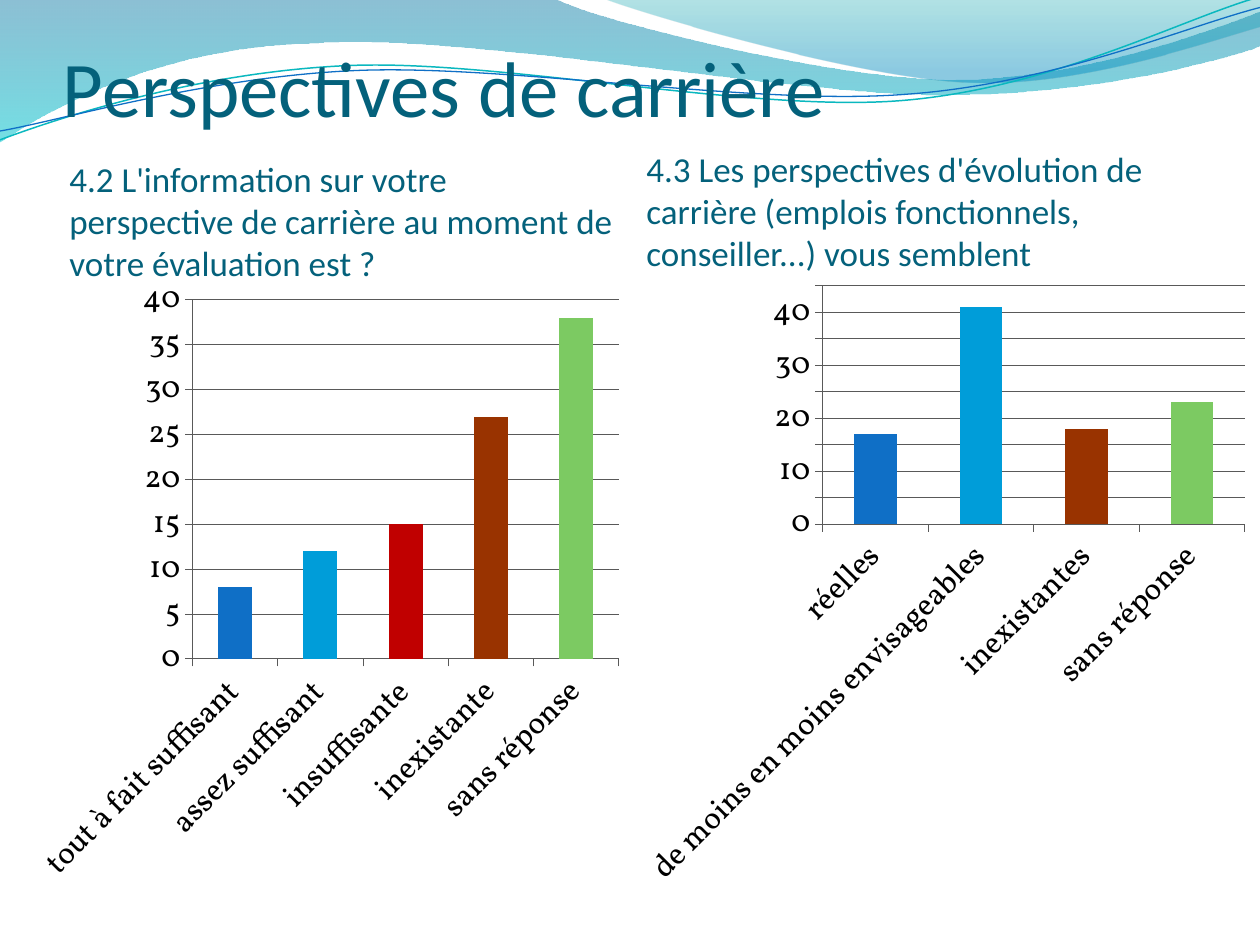
from math import cos, radians, sin

from lxml.etree import SubElement
from pptx import Presentation
from pptx.chart.data import CategoryChartData
from pptx.dml.color import RGBColor
from pptx.enum.chart import XL_CHART_TYPE, XL_TICK_MARK
from pptx.enum.text import MSO_ANCHOR
from pptx.oxml import parse_xml
from pptx.oxml.ns import nsdecls, qn
from pptx.util import Inches, Pt

COLORS = {"title": "04617B", "blue": "0F6FC6", "sky": "009DD9", "red": "C00000",
          "brown": "993300", "green": "7CCA62", "teal": "0AB8BF", "deep": "0074A1",
          "aqua": "00C6CF", "sea": "00A1A9", "azure": "008BBF", "grid": "595959",
          "text": "000000"}

WAVE = [(0, 0), (4.4, -0.01), (4.76, 0.17, 6.64, 0.63, 7.58, 0.63),
        (8.53, 0.63, 9.58, 0.26, 10, 0.09), (10.01, 0.36),
        (9.83, 0.44, 8.7, 0.76, 7.46, 0.75), (6.22, 0.75, 3.82, 0.28, 2.57, 0.34),
        (1.29, 0.36, 0.46, 0.83, -0.01, 1.13)]
CREST = [(4.79, -0.01), (5.09, 0.11, 6.82, 0.62, 7.69, 0.65),
         (8.56, 0.69, 9.61, 0.32, 10, 0.21), (10, 0)]
TEAL_LINE = [(0, 1.11), (0.48, 0.93, 1.58, 0.57, 2.77, 0.52),
             (3.95, 0.47, 5.93, 0.89, 7.13, 0.8), (8.33, 0.71, 9.38, 0.15, 9.98, -0.02)]
BLUE_LINE = [(0, 1.04), (0.47, 0.96, 1.64, 0.61, 2.83, 0.56),
             (4.03, 0.51, 5.97, 0.84, 7.17, 0.75), (8.36, 0.67, 9.41, 0.21, 10, 0.06)]
TILT = 2.7


def rgb(name):
    """Return the named colour."""
    return RGBColor.from_string(COLORS[name])


def set_format(obj, values):
    """Set every attribute listed in a dict."""
    for key, value in values.items():
        setattr(obj, key, value)


def split_points(step):
    """Split a flat step into its x, y pairs."""
    return list(zip(step[::2], step[1::2]))


def turn(step, center):
    """Turn the points of a step clockwise by the tilt angle."""
    a, (cx, cy) = radians(TILT), center
    return tuple(v for x, y in split_points(step)
                 for v in (cx + (x - cx) * cos(a) - (y - cy) * sin(a),
                           cy + (x - cx) * sin(a) + (y - cy) * cos(a)))


def add_outline(s, left, top, steps, close):
    """Add a freeform whose six-number steps are cubic curves."""
    pts = [(Inches(left + x), Inches(top + y)) for step in steps for x, y in split_points(step)]
    fb = s.shapes.build_freeform(*pts[0])
    fb.add_line_segments(pts[1:], close=close)
    sp = fb.convert_to_shape()
    sp.shadow.inherit = False
    segments = iter(list(sp._element.iter(qn("a:lnTo"))))
    for step in steps[1:]:
        group = [next(segments) for _ in split_points(step)]
        if len(group) == 3:
            group[0].tag = qn("a:cubicBezTo")
            for segment in group[1:]:
                group[0].append(segment[0])
                segment.getparent().remove(segment)
    return sp


def add_band(s, left, top, steps, stops):
    """Add a wave filled with a translucent vertical gradient."""
    sp = add_outline(s, left, top, steps, True)
    sp.line.fill.background()
    sp.fill.gradient()
    sp.fill.gradient_angle = 270
    for stop, (position, color, _) in zip(sp.fill.gradient_stops, stops):
        stop.position = position
        stop.color.rgb = rgb(color)
    for clr, (_, _, alpha) in zip(sp._element.spPr.iter(qn("a:srgbClr")), stops):
        SubElement(clr, qn("a:alpha"), val=str(alpha * 1000))


def add_curve(s, left, top, steps, center, color, width):
    """Add a tilted open curve."""
    sp = add_outline(s, left, top, [turn(step, center) for step in steps], False)
    sp.rotation = 360 - TILT
    sp.fill.background()
    sp.line.color.rgb = rgb(color)
    sp.line.width = Pt(width)


def add_header(s, left, top):
    """Draw the waves across the top of the slide."""
    add_band(s, left, top, WAVE, [(0, "deep", 45), (1, "aqua", 55)])
    add_band(s, left, top, CREST, [(0, "sea", 30), (0.8, "azure", 45)])
    add_curve(s, left, top, TEAL_LINE, (4.99, 0.58), "teal", 0.85)
    add_curve(s, left, top, BLUE_LINE, (5, 0.59), "blue", 0.75)


def add_text(s, box, text, size, frame, before=0):
    """Add one paragraph of text in a box."""
    tf = s.shapes.add_textbox(*map(Inches, box)).text_frame
    set_format(tf, {"word_wrap": True, **frame})
    p = tf.paragraphs[0]
    p.space_before = Pt(before)
    r = p.add_run()
    r.text = text
    set_format(r.font, {"size": Pt(size), "name": "Calibri"})
    r.font.color.rgb = rgb("title")


def set_plot_area(chart, box, plot):
    """Place the inner plot area, given relative to the chart box in inches."""
    area = chart._chartSpace.chart.plotArea
    for old in area.findall(qn("c:layout")):
        area.remove(old)
    layout = parse_xml(f"<c:layout {nsdecls('c')}><c:manualLayout/></c:layout>")
    manual = layout[0]
    SubElement(manual, qn("c:layoutTarget"), val="inner")
    for key in ("xMode", "yMode"):
        SubElement(manual, qn(f"c:{key}"), val="edge")
    for key, value, total in zip("xywh", plot, box[2:] * 2):
        SubElement(manual, qn(f"c:{key}"), val=f"{value / total:.4f}")
    area.insert(0, layout)


def add_columns(s, box, plot, top_value, bars):
    """Add a column chart with one colour per answer."""
    data = CategoryChartData()
    data.categories = [name for name, _, _ in bars]
    data.add_series("Series 1", [value for _, value, _ in bars])
    chart = s.shapes.add_chart(XL_CHART_TYPE.COLUMN_CLUSTERED, *map(Inches, box), data).chart
    set_format(chart, {"has_legend": False, "has_title": False})
    set_format(chart.font, {"size": Pt(18), "name": "Vollkorn"})
    chart.font.color.rgb = rgb("text")
    set_format(chart.plots[0], {"gap_width": 150, "vary_by_categories": False})
    series = chart.plots[0].series[0]
    series.format.fill.solid()
    series.format.fill.fore_color.rgb = rgb(bars[0][2])
    for i, (_, _, color) in enumerate(bars[1:], 1):
        fill = series.points[i].format.fill
        fill.solid()
        fill.fore_color.rgb = rgb(color)
    cat, val = chart.category_axis, chart.value_axis
    set_format(val, {"minimum_scale": 0, "maximum_scale": top_value, "major_unit": 5,
                     "has_major_gridlines": True})
    for axis in (cat, val):
        axis.major_tick_mark = XL_TICK_MARK.OUTSIDE
        axis.tick_labels.font.size = Pt(18)
    for part in (cat, val, val.major_gridlines):
        part.format.line.color.rgb = rgb("grid")
        part.format.line.width = Pt(0.5)
    cat._element.find(qn("c:txPr")).find(qn("a:bodyPr")).set("rot", "-2700000")
    set_plot_area(chart, box, plot)


def build():
    """Build and save the slide."""
    prs = Presentation()
    set_format(prs, {"slide_width": Inches(10), "slide_height": Inches(7.5)})
    s = prs.slides.add_slide(prs.slide_layouts[6])
    add_header(s, 0, 0)
    title = {"vertical_anchor": MSO_ANCHOR.BOTTOM, "margin_left": 0, "margin_right": 0,
             "margin_top": Inches(0.05), "margin_bottom": 0}
    body = {"vertical_anchor": MSO_ANCHOR.MIDDLE, "margin_left": Inches(0.05),
            "margin_right": Inches(0.05), "margin_top": 0, "margin_bottom": 0}
    add_text(s, (0.5, 0.36, 9, 0.7), "Perspectives de carrière", 45, title)
    add_text(s, (0.5, 1.39, 4.42, 0.72), "4.2 L'information sur votre perspective de "
             "carrière au moment de votre évaluation est ?", 20, body, 4)
    add_text(s, (5.08, 1.31, 4.42, 0.72), "4.3 Les perspectives d'évolution de carrière "
             "(emplois fonctionnels, conseiller...) vous semblent", 20, body, 4)
    add_columns(s, (5, 2.18, 4.97, 4.99), (1.53, 0.09, 3.35, 1.89), 45, [
        ("réelles", 17, "blue"), ("de moins en moins envisageables", 41, "sky"),
        ("inexistantes", 18, "brown"), ("sans réponse", 23, "green")])
    add_columns(s, (0.2, 2.1, 4.8, 5.04), (1.33, 0.28, 3.38, 2.85), 40, [
        ("tout à fait suffisant", 8, "blue"), ("assez suffisant", 12, "sky"),
        ("insuffisante", 15, "red"), ("inexistante", 27, "brown"),
        ("sans réponse", 38, "green")])
    prs.save("out.pptx")


if __name__ == "__main__":
    build()
